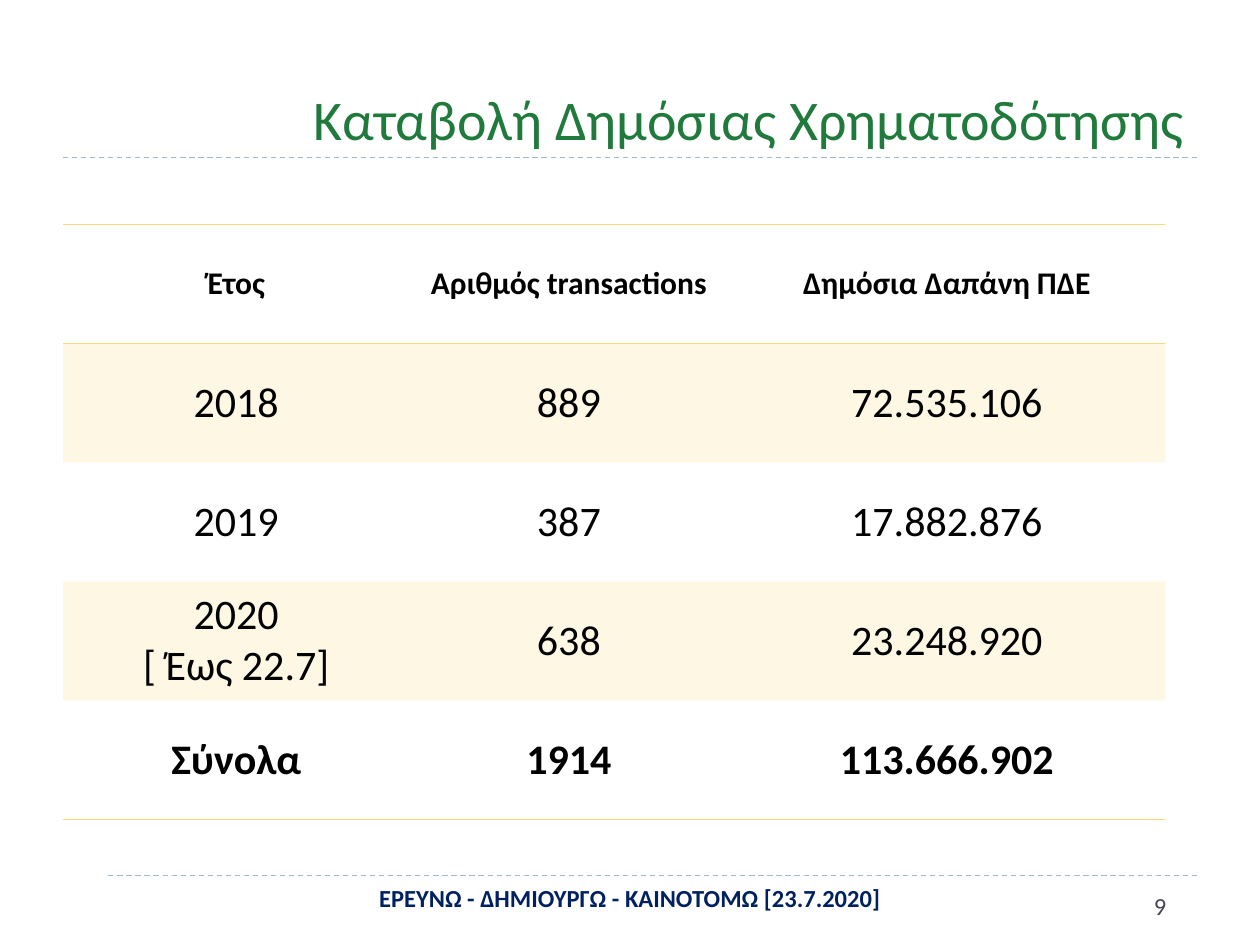
from lxml import etree
from pptx import Presentation
from pptx.dml.color import RGBColor
from pptx.enum.dml import MSO_LINE
from pptx.enum.shapes import MSO_CONNECTOR
from pptx.enum.text import MSO_ANCHOR, PP_ALIGN
from pptx.oxml.ns import qn
from pptx.util import Inches, Pt

LEFT, CENTER, RIGHT = PP_ALIGN.LEFT, PP_ALIGN.CENTER, PP_ALIGN.RIGHT
TOP, MIDDLE, BOTTOM = MSO_ANCHOR.TOP, MSO_ANCHOR.MIDDLE, MSO_ANCHOR.BOTTOM
DASH, STRAIGHT = MSO_LINE.DASH, MSO_CONNECTOR.STRAIGHT
GREEN = RGBColor(0x20, 0x7A, 0x3C)
NAVY = RGBColor(0x00, 0x20, 0x60)
SLATE = RGBColor(0x46, 0x46, 0x53)
RULE_BLUE = RGBColor(0x9F, 0xB8, 0xCD)
YELLOW = RGBColor(0xFA, 0xDA, 0x7A)
BLACK = RGBColor(0x00, 0x00, 0x00)
FONT = "Calibri"
COLUMNS, ROWS, UNIT = 20, 15, 0.5
NO_GRID_STYLE = "{2D5ABB26-0587-4C30-8999-92F81FD0307C}"

PAYMENTS = [
    ["Έτος", "Αριθμός transactions", "Δημόσια Δαπάνη ΠΔΕ"],
    ["2018", "889", "72.535.106"],
    ["2019", "387", "17.882.876"],
    ["2020\n[ Έως 22.7]", "638", "23.248.920"],
    ["Σύνολα", "1914", "113.666.902"],
]


def grid(units):
    return Inches(units * UNIT)


def write(frame, text, size=24, color=BLACK, bold=False, align=CENTER):
    for index, line in enumerate(text.split("\n")):
        paragraph = frame.add_paragraph() if index else frame.paragraphs[0]
        paragraph.alignment = align
        run = paragraph.add_run()
        run.text = line
        font = run.font
        font.name, font.size, font.bold = FONT, Pt(size), bold
        font.color.rgb = color


class SlideBuilder:
    """Places styled elements on a slide, measured in grid columns and rows."""

    def __init__(self, slide):
        self.slide = slide

    def text(self, left, top, width, height, text, anchor=TOP, **style):
        box = self.slide.shapes.add_textbox(*map(grid, (left, top, width, height)))
        box.text_frame.word_wrap = True
        box.text_frame.vertical_anchor = anchor
        write(box.text_frame, text, **style)

    def rule(self, left, right, top):
        rule = self.slide.shapes.add_connector(STRAIGHT, *map(grid, (left, top, right, top)))
        rule.line.color.rgb = RULE_BLUE
        rule.line.width = Pt(0.75)
        rule.line.dash_style = DASH
        etree.SubElement(rule._element.spPr, qn("a:effectLst"))

    def borders(self, cell, above, below):
        properties = cell._tc.get_or_add_tcPr()
        for side, ruled in (("L", False), ("R", False), ("T", above), ("B", below)):
            edge = etree.SubElement(properties, qn(f"a:ln{side}"), w=str(Pt(1)))
            if ruled:
                fill = etree.SubElement(edge, qn("a:solidFill"))
                etree.SubElement(fill, qn("a:srgbClr"), val=str(YELLOW))
            else:
                etree.SubElement(edge, qn("a:noFill"))

    def shade(self, cell, banded):
        if not banded:
            cell.fill.background()
            return
        cell.fill.solid()
        cell.fill.fore_color.rgb = YELLOW
        tint = cell._tc.tcPr.find(f"{qn('a:solidFill')}/{qn('a:srgbClr')}")
        etree.SubElement(tint, qn("a:alpha"), val="20000")

    def table(self, left, top, widths, row_height, content):
        last = len(content) - 1
        frame = self.slide.shapes.add_table(
            len(content), len(widths), grid(left), grid(top),
            grid(sum(widths)), grid(row_height * len(content)))
        table = frame.table
        table.first_row = table.horz_banding = False
        table._tbl.tblPr.find(qn("a:tableStyleId")).text = NO_GRID_STYLE
        for column, width in zip(table.columns, widths):
            column.width = grid(width)
        for index, entries in enumerate(content):
            table.rows[index].height = grid(row_height)
            for cell, entry in zip(table.rows[index].cells, entries):
                cell.vertical_anchor = MIDDLE
                self.borders(cell, above=index < 2, below=index in (0, last))
                self.shade(cell, banded=index % 2 == 1)
                write(cell.text_frame, entry, size=24 if index else 18,
                      bold=index in (0, last))


def main():
    deck = Presentation()
    deck.slide_width, deck.slide_height = grid(COLUMNS), grid(ROWS)
    builder = SlideBuilder(deck.slides.add_slide(deck.slide_layouts[6]))
    builder.rule(1.72, 19, 13.9)
    builder.rule(1, 19, 2.5)
    builder.text(2.44, 0.34, 16.56, 2.16, "Καταβολή Δημόσιας Χρηματοδότησης",
                 anchor=BOTTOM, size=32, color=GREEN, align=RIGHT)
    builder.text(5.46, 13.92, 9.08, 0.62, "ΕΡΕΥΝΩ - ΔΗΜΙΟΥΡΓΩ - ΚΑΙΝΟΤΟΜΩ [23.7.2020]",
                 size=14, color=NAVY, bold=True)
    builder.text(18.12, 14.04, 1, 0.8, "9", size=14, color=SLATE, align=LEFT)
    builder.table(1, 3.56, (5.5, 5.06, 6.94), 1.89, PAYMENTS)
    deck.save("out.pptx")


if __name__ == "__main__":
    main()
